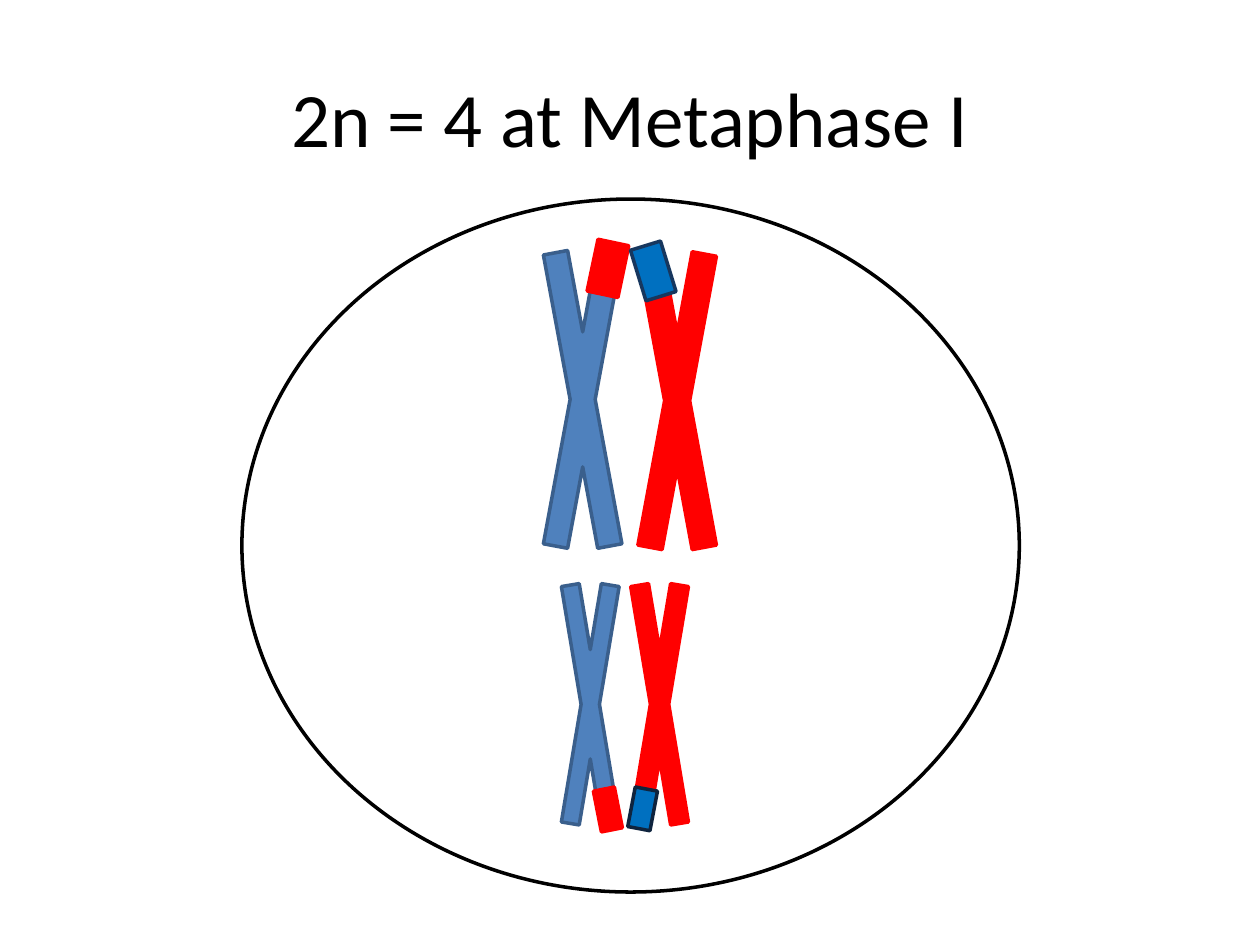
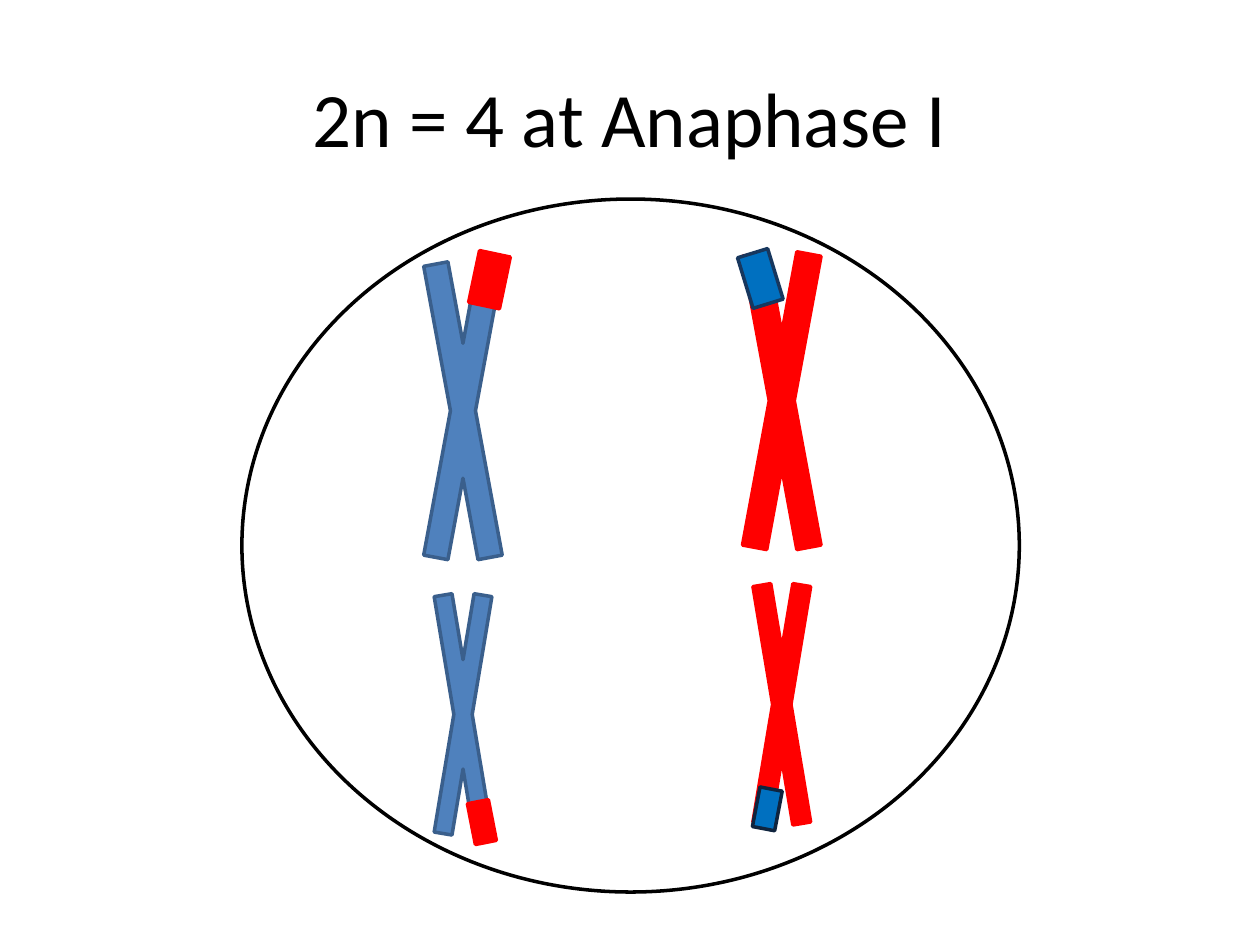
from dataclasses import dataclass

from pptx import Presentation
from pptx.dml.color import RGBColor
from pptx.enum.shapes import MSO_SHAPE
from pptx.enum.text import MSO_ANCHOR, PP_ALIGN
from pptx.util import Inches, Pt

COLUMNS, ROWS = 100, 75
CELL = Inches(10) // COLUMNS


@dataclass(frozen=True)
class Theme:
    font: str = "Calibri"
    title_size: int = 44
    line_width: int = 2
    ink: str = "000000"
    blue: str = "4F81BD"
    blue_edge: str = "3A5F8C"
    red: str = "FF0000"
    tip_blue: str = "0070C0"
    long_tip_edge: str = "17375E"
    short_tip_edge: str = "0F243E"


THEME = Theme()


@dataclass(frozen=True)
class Chromosome:
    size: tuple
    fill: str
    edge: str
    tip_size: tuple
    tip_angle: float
    tip_fill: str
    tip_edge: str


LONG, SHORT = (8.3, 44.8), (6.1, 36.4)
BLUE, RED = (THEME.blue, THEME.blue_edge), (THEME.red, THEME.red)
CHROMOSOMES = (
    Chromosome(LONG, *BLUE, (2.5, 4.2), 11.9, *RED),
    Chromosome(LONG, *RED, (2.5, 4.2), 342.9, THEME.tip_blue, THEME.long_tip_edge),
    Chromosome(SHORT, *BLUE, (1.7, 3.3), 348.9, *RED),
    Chromosome(SHORT, *RED, (1.8, 3.2), 10.8, THEME.tip_blue, THEME.short_tip_edge),
)

# Left and top in grid cells, in the order of CHROMOSOMES
STAGES = (
    ("2n = 4 at Metaphase I",
     ((42.1, 9.3), (49.6, 9.4), (43.8, 37.7), (49.3, 37.7)),
     ((47, 19.2), (50.6, 19.4), (47.4, 62.6), (50.1, 62.6))),
    ("2n = 4 at Anaphase I",
     ((32.6, 10.2), (57.9, 9.4), (33.7, 38.5), (59, 37.7)),
     ((37.6, 20.1), (59.1, 20), (37.4, 63.6), (60, 62.6))),
)


def cells(*lengths):
    return [round(length * CELL) for length in lengths]


def add_title(slide, text):
    frame = slide.shapes.add_textbox(*cells(5, 3, COLUMNS - 10, 12.5)).text_frame
    frame.word_wrap = True
    frame.vertical_anchor = MSO_ANCHOR.MIDDLE
    paragraph = frame.paragraphs[0]
    paragraph.text = text
    paragraph.alignment = PP_ALIGN.CENTER
    paragraph.font.name = THEME.font
    paragraph.font.size = Pt(THEME.title_size)
    paragraph.font.color.rgb = RGBColor.from_string(THEME.ink)


def add_outlined(shapes, preset, position, size, edge, fill=None, angle=0):
    shape = shapes.add_shape(preset, *cells(*position, *size))
    shape.shadow.inherit = False
    shape.rotation = angle
    shape.line.color.rgb = RGBColor.from_string(edge)
    shape.line.width = Pt(THEME.line_width)
    if fill:
        shape.fill.solid()
        shape.fill.fore_color.rgb = RGBColor.from_string(fill)
    else:
        shape.fill.background()


def add_chromosomes(slide, positions, tip_positions):
    """Draw the four chromosomes, then the exchanged tips over their arms."""
    shapes = slide.shapes.add_group_shape().shapes
    for item, position in zip(CHROMOSOMES, positions):
        add_outlined(shapes, MSO_SHAPE.MATH_MULTIPLY, position, item.size,
                     item.edge, item.fill)
    for item, position in zip(CHROMOSOMES, tip_positions):
        add_outlined(shapes, MSO_SHAPE.RECTANGLE, position, item.tip_size,
                     item.tip_edge, item.tip_fill, item.tip_angle)


def main():
    presentation = Presentation()
    presentation.slide_width, presentation.slide_height = cells(COLUMNS, ROWS)
    blank = presentation.slide_layouts[6]
    for title, positions, tip_positions in STAGES:
        slide = presentation.slides.add_slide(blank)
        add_title(slide, title)
        add_outlined(slide.shapes, MSO_SHAPE.OVAL, (19.2, 15.8), (61.7, 55), THEME.ink)
        add_chromosomes(slide, positions, tip_positions)
    presentation.save("out.pptx")


if __name__ == "__main__":
    main()
